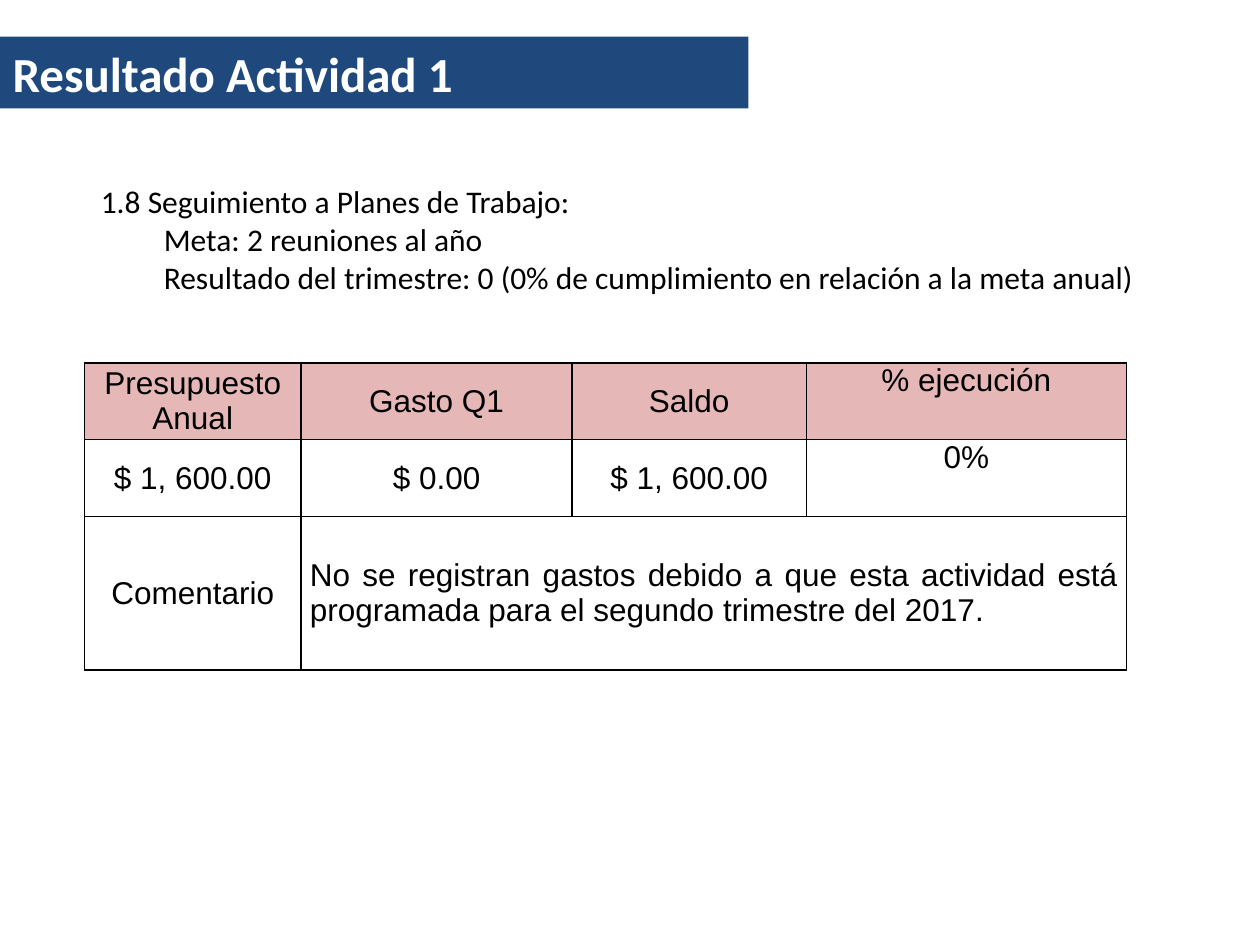
from lxml.etree import SubElement
from pptx import Presentation
from pptx.dml.color import RGBColor
from pptx.enum.text import MSO_ANCHOR as Anchor, MSO_AUTO_SIZE as AutoSize, PP_ALIGN as Align
from pptx.oxml.ns import qn
from pptx.util import Inches, Pt

NAVY = RGBColor(0x1F, 0x49, 0x7D)
PINK = RGBColor(0xE5, 0xB8, 0xB7)
WHITE = RGBColor(0xFF, 0xFF, 0xFF)
BLACK = RGBColor(0, 0, 0)

HEADING = "Resultado Actividad 1"
GOALS = [
    ("1.8 Seguimiento a Planes de Trabajo:", 0.5),
    ("Meta: 2 reuniones al año", 1),
    ("Resultado del trimestre: 0 (0% de cumplimiento en relación a la meta anual)", 1),
]
BUDGET = [
    ["Presupuesto Anual", "Gasto Q1", "Saldo", "% ejecución"],
    ["$ 1, 600.00", "$ 0.00", "$ 1, 600.00", "0%"],
    ["Comentario", "No se registran gastos debido a que esta actividad está "
     "programada para el segundo trimestre del 2017."],
]
COLUMN_WIDTHS = [1.72, 2.15, 1.86, 2.54]
ROW_UNIT = 0.61
ROW_UNITS = [1, 1, 2]


def format_font(font, name, size, color, bold=False):
    font.name, font.size, font.bold = name, Pt(size), bold
    font.color.rgb = color


def place(holder, left, top, width, height):
    holder.left, holder.top = Inches(left), Inches(top)
    holder.width, holder.height = Inches(width), Inches(height)
    holder.text_frame.word_wrap = True
    holder.text_frame.auto_size = AutoSize.NONE
    holder.text_frame.vertical_anchor = Anchor.MIDDLE


def add_borders(cell):
    properties = cell._tc.get_or_add_tcPr()
    for side in ("a:lnL", "a:lnR", "a:lnT", "a:lnB"):
        line = SubElement(properties, qn(side), w=str(Pt(1)))
        fill = SubElement(line, qn("a:solidFill"))
        SubElement(fill, qn("a:srgbClr"), val=str(BLACK))


def add_heading(slide):
    heading = slide.shapes.title
    place(heading, 0, 0.29, 5.94, 0.57)
    heading.fill.solid()
    heading.fill.fore_color.rgb = NAVY
    heading.text_frame.text = HEADING
    paragraph = heading.text_frame.paragraphs[0]
    paragraph.alignment = Align.LEFT
    format_font(paragraph.runs[0].font, "Calibri", 28, WHITE, bold=True)


def add_goals(slide):
    goals = slide.placeholders[1]
    place(goals, 0.2, 1.39, 9.37, 1.01)
    goals.text_frame.text = "\n".join(text for text, _ in GOALS)
    for paragraph, (_, indent) in zip(goals.text_frame.paragraphs, GOALS):
        properties = paragraph._p.get_or_add_pPr()
        properties.set("marL", str(Inches(indent)))
        properties.set("indent", "0")
        SubElement(properties, qn("a:buNone"))
        paragraph.space_before = Pt(0)
        format_font(paragraph.runs[0].font, "Calibri", 18, BLACK)


def add_budget(slide):
    budget = slide.shapes.add_table(
        len(ROW_UNITS), len(COLUMN_WIDTHS), Inches(0.67), Inches(2.88),
        Inches(sum(COLUMN_WIDTHS)), Inches(ROW_UNIT * sum(ROW_UNITS))).table
    budget.first_row = budget.horz_banding = False
    for column, width in zip(budget.columns, COLUMN_WIDTHS):
        column.width = Inches(width)
    for row, units in zip(budget.rows, ROW_UNITS):
        row.height = Inches(ROW_UNIT * units)
    last_row, last_column = len(ROW_UNITS) - 1, len(COLUMN_WIDTHS) - 1
    comment = budget.cell(last_row, 1)
    comment.merge(budget.cell(last_row, last_column))

    for cell in budget.iter_cells():
        add_borders(cell)
        cell.fill.background()
    for r, texts in enumerate(BUDGET):
        for c, text in enumerate(texts):
            cell = budget.cell(r, c)
            if r == 0:
                cell.fill.solid()
                cell.fill.fore_color.rgb = PINK
            cell.margin_left = cell.margin_right = Inches(0.07)
            cell.margin_top = cell.margin_bottom = 0
            cell.vertical_anchor = Anchor.TOP if c == last_column else Anchor.MIDDLE
            cell.text_frame.text = text
            paragraph = cell.text_frame.paragraphs[0]
            paragraph.alignment = Align.CENTER
            format_font(paragraph.runs[0].font, "Arial", 18, BLACK)
    comment.text_frame.paragraphs[0].alignment = Align.JUSTIFY


def main():
    presentation = Presentation()
    presentation.slide_width, presentation.slide_height = Inches(10), Inches(7.5)
    slide = presentation.slides.add_slide(presentation.slide_layouts[1])
    add_heading(slide)
    add_goals(slide)
    add_budget(slide)
    presentation.save("out.pptx")


if __name__ == "__main__":
    main()
